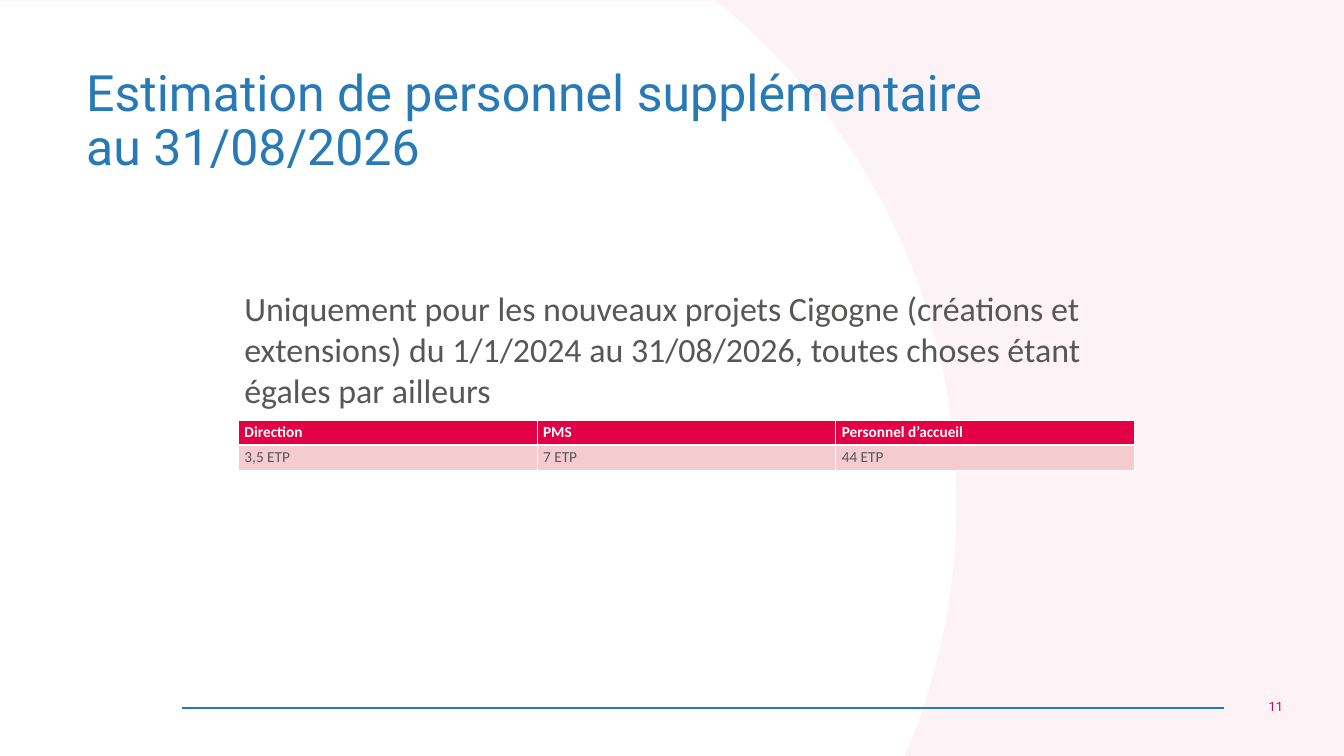
from lxml import etree
from pptx import Presentation
from pptx.dml.color import RGBColor
from pptx.enum.shapes import MSO_CONNECTOR
from pptx.enum.text import MSO_ANCHOR, MSO_AUTO_SIZE, PP_ALIGN
from pptx.oxml import parse_xml
from pptx.oxml.ns import nsdecls, qn
from pptx.util import Inches, Pt

LEFT, RIGHT = PP_ALIGN.LEFT, PP_ALIGN.RIGHT
TOP = MSO_ANCHOR.TOP
STRAIGHT = MSO_CONNECTOR.STRAIGHT
NO_AUTOFIT = MSO_AUTO_SIZE.NONE

COLORS = {
    "background": "FDF2F6",
    "white": "FFFFFF",
    "red": "E30044",
    "blue": "277AB5",
    "rule": "277AB6",
    "gray": "575756",
    "pink": "F4CCCF",
}
TITLE_TEXT = "Estimation de personnel supplémentaire\vau 31/08/2026"
SCOPE_TEXT = (
    "Uniquement pour les nouveaux projets Cigogne (créations et extensions) "
    "du 1/1/2024 au 31/08/2026, toutes choses étant égales par ailleurs"
)
STAFF_ROWS = [
    ["Direction", "PMS", "Personnel d’accueil"],
    ["3,5 ETP", "7 ETP", "44 ETP"],
]


def color(name):
    return RGBColor.from_string(COLORS[name])


def write_text(frame, text, *, size, font, fill, bold=False, align=LEFT, spacing=None):
    frame.word_wrap = True
    frame.vertical_anchor = TOP
    para = frame.paragraphs[0]
    para.text = text
    para.alignment = align
    para.line_spacing = spacing
    for span in para.runs:
        span.font.size = Pt(size)
        span.font.name = font
        span.font.bold = bold
        span.font.color.rgb = color(fill)


deck = Presentation()
deck.slide_width, deck.slide_height = Inches(21.99), Inches(12.37)
page = deck.slides.add_slide(deck.slide_layouts[5])
page.background.fill.solid()
page.background.fill.fore_color.rgb = color("background")

# White area with a curved right edge, sampled from Bézier curves
curves = [
    [(14.82, 12.33), (15.35, 11.07), (15.65, 9.68), (15.65, 8.23)],
    [(15.65, 8.23), (15.65, 4.96), (14.16, 2.04), (11.82, 0.11)],
]
steps = 40
edge = []
for start, pull_a, pull_b, end in curves:
    for step in range(steps + 1):
        t = step / steps
        weights = ((1 - t) ** 3, 3 * t * (1 - t) ** 2, 3 * t**2 * (1 - t), t**3)
        edge.append([
            sum(weight * value for weight, value in zip(weights, values))
            for values in zip(start, pull_a, pull_b, end)
        ])
outline = [(14.8, 12.37), *edge, (11.69, 0.01), (0, 0.01)]
builder = page.shapes.build_freeform(0, Inches(12.37), scale=1.0)
builder.add_line_segments([(Inches(x), Inches(y)) for x, y in outline], close=True)
white_area = builder.convert_to_shape()
white_area.shadow.inherit = False
white_area.fill.solid()
white_area.fill.fore_color.rgb = color("white")
white_area.line.fill.background()

# Footer
number_box = page.shapes.add_textbox(Inches(20.02), Inches(11.38), Inches(1.07), Inches(0.35))
write_text(number_box.text_frame, "11", size=15, font="Roboto", fill="red", align=RIGHT)
footer_rule = page.shapes.add_connector(
    STRAIGHT, Inches(2.98), Inches(11.59), Inches(20.02), Inches(11.59)
)
footer_rule.line.color.rgb = color("rule")
footer_rule.line.width = Pt(2)
etree.SubElement(footer_rule._element.spPr, qn("a:effectLst"))

# Title, raised above the white area
title = page.shapes.title
white_area._element.getparent().append(title._element)
title.left, title.top = Inches(1.31), Inches(1.06)
title.width, title.height = Inches(16.06), Inches(0.93)
title.text_frame.auto_size = NO_AUTOFIT
write_text(title.text_frame, TITLE_TEXT, size=59, font="Roboto", fill="blue", spacing=0.9)

# Staff table
table_frame = page.shapes.add_table(
    len(STAFF_ROWS), len(STAFF_ROWS[0]), Inches(3.9), Inches(6.87), Inches(14.66), Inches(0.82)
)
table = table_frame.table
for row, labels in enumerate(STAFF_ROWS):
    header = row == 0
    for column, label in enumerate(labels):
        cell = table.cell(row, column)
        write_text(
            cell.text_frame, label, size=18, font="Calibri",
            fill="white" if header else "gray", bold=header,
        )
        borders = {"lnL": 1, "lnR": 1, "lnT": 1 if header else 3, "lnB": 3 if header else 1}
        properties = cell._tc.get_or_add_tcPr()
        for side, width in borders.items():
            properties.append(parse_xml(
                f'<a:{side} {nsdecls("a")} w="{Pt(width)}"><a:solidFill>'
                f'<a:srgbClr val="{COLORS["white"]}"/></a:solidFill></a:{side}>'
            ))
        cell.fill.solid()
        cell.fill.fore_color.rgb = color("red" if header else "pink")

# Scope statement
scope_box = page.shapes.add_textbox(Inches(3.9), Inches(4.66), Inches(14.66), Inches(2.12))
write_text(scope_box.text_frame, SCOPE_TEXT, size=40, font="Calibri", fill="gray")

deck.save("out.pptx")
